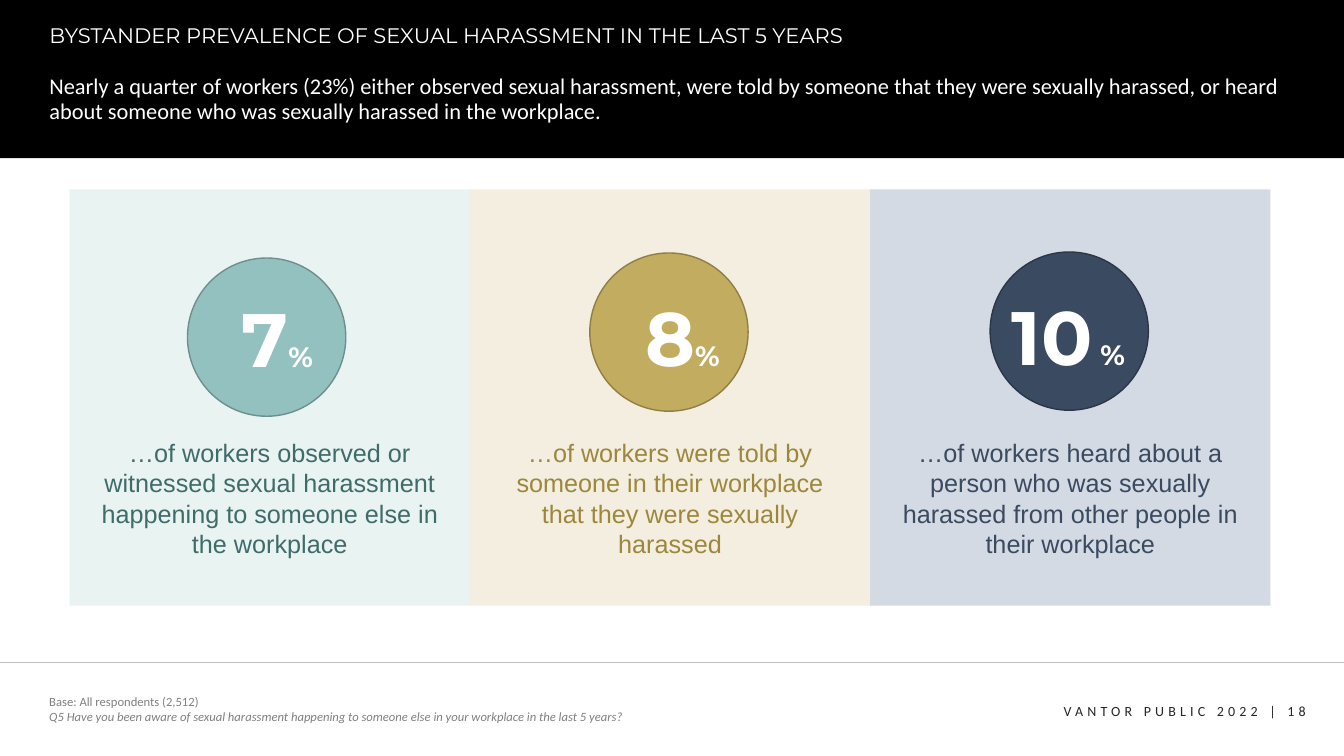
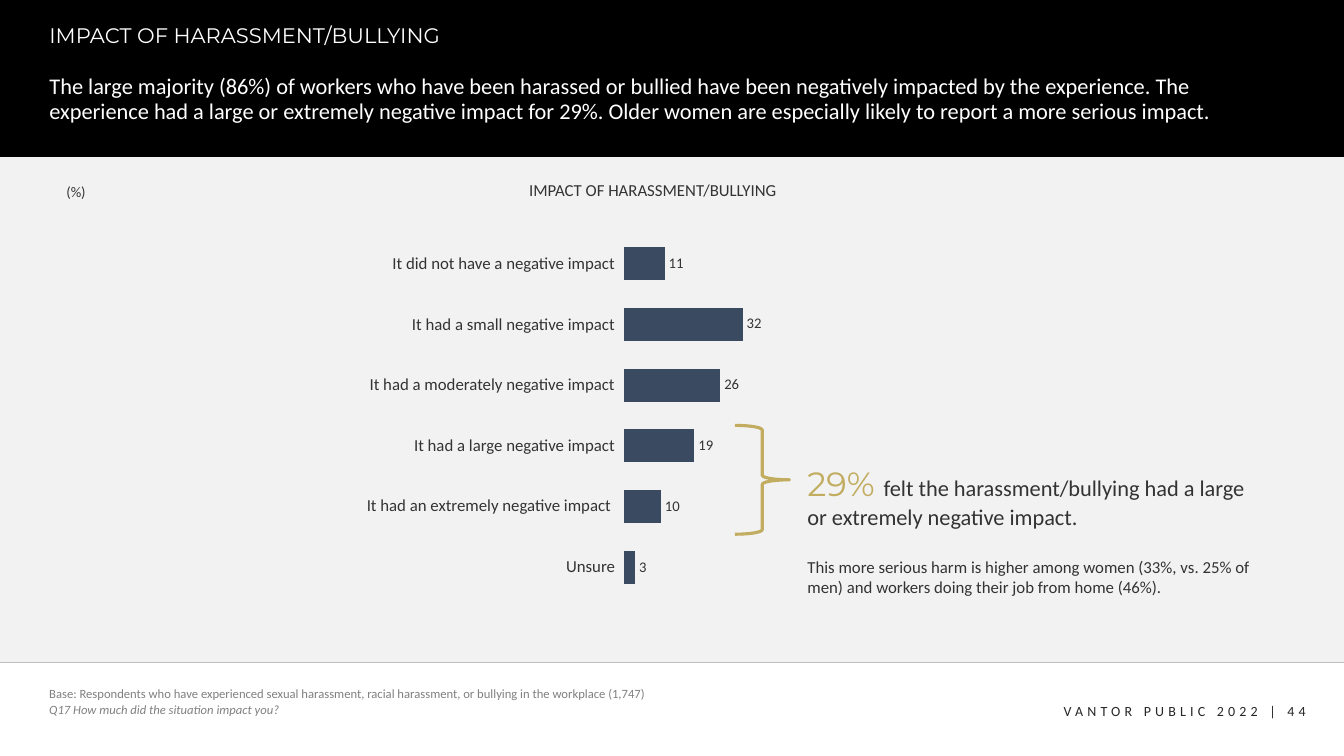
import pptx
import pptx.chart.data
import pptx.dml.color
import pptx.enum.chart
import pptx.enum.shapes
import pptx.enum.text
import pptx.oxml
import pptx.oxml.ns
import pptx.util

Inches = pptx.util.Inches
Pt = pptx.util.Pt
SHAPE = pptx.enum.shapes.MSO_SHAPE
ALIGN = pptx.enum.text.PP_ALIGN
ANCHOR = pptx.enum.text.MSO_ANCHOR
qn = pptx.oxml.ns.qn

COLORS = {
    "black": "000000", "white": "FFFFFF", "panel": "F2F2F2", "rule": "BFBFBF",
    "text": "333333", "footer": "262626", "note": "808080",
    "teal": "93C1BF", "teal_line": "6D8F8D", "teal_pale": "E9F3F2", "teal_text": "3E6C6A",
    "gold": "C1AC5F", "gold_line": "8F7F46", "gold_pale": "F3EEDF", "gold_text": "9C873C",
    "navy": "3A4A60", "navy_line": "2B3747", "navy_pale": "D3DAE4", "navy_text": "3A4A60",
}
BODY, HEAD, CAPTION = "Calibri", "Montserrat", "Arial"
WIDTH, HEIGHT = 13.33, 7.5
BAND_H, RULE_Y = 1.57, 6.57
NO_GRID_STYLE = "{2D5ABB26-0587-4C30-8999-92F81FD0307C}"


def rgb(name):
    return pptx.dml.color.RGBColor.from_string(COLORS[name])


def xml(tag, inner=""):
    """Build one element in the chart or drawing namespace."""
    return pptx.oxml.parse_xml(
        f"<{tag} {pptx.oxml.ns.nsdecls('a', 'c')}>{inner}</{tag}>")


class Deck:
    def __init__(self):
        self.prs = pptx.Presentation()
        self.prs.slide_width = Inches(WIDTH)
        self.prs.slide_height = Inches(HEIGHT)
        self.s = None

    def font(self, font, size, color, name=BODY, bold=False, italic=False):
        font.size, font.name = Pt(size), name
        font.bold, font.italic = bold, italic
        font.color.rgb = rgb(color)

    def place(self, sp, box):
        sp.left, sp.top, sp.width, sp.height = map(Inches, box)

    def fill_text(self, tf, paragraphs, align=ALIGN.LEFT, anchor=ANCHOR.TOP,
                  spacing=None, before=0):
        """Write paragraphs, each a list of (text, font settings) runs."""
        tf.word_wrap = True
        tf.auto_size = pptx.enum.text.MSO_AUTO_SIZE.NONE
        tf.vertical_anchor = anchor
        for i, runs in enumerate(paragraphs):
            p = tf.add_paragraph() if i else tf.paragraphs[0]
            p.alignment, p.line_spacing, p.space_before = align, spacing, Pt(before)
            for text, style in runs:
                r = p.add_run()
                r.text = text
                self.font(r.font, **style)

    def text(self, box, paragraphs, **layout):
        sp = self.s.shapes.add_textbox(*map(Inches, box))
        self.fill_text(sp.text_frame, paragraphs, **layout)
        return sp

    def shape(self, kind, box, fill=None, line=None, weight=1):
        sp = self.s.shapes.add_shape(kind, *map(Inches, box))
        sp.shadow.inherit = False
        if fill:
            sp.fill.solid()
            sp.fill.fore_color.rgb = rgb(fill)
        else:
            sp.fill.background()
        if line:
            sp.line.color.rgb = rgb(line)
            sp.line.width = Pt(weight)
        else:
            sp.line.fill.background()
        return sp

    def rule(self, y):
        line = self.s.shapes.add_connector(
            pptx.enum.shapes.MSO_CONNECTOR.STRAIGHT,
            0, Inches(y), Inches(WIDTH), Inches(y))
        line.line.color.rgb = rgb("rule")
        line.line.width = Pt(0.5)
        line.element.spPr.append(xml("a:effectLst"))

    def slide(self, title, summary, page, base, question, note_y, panel=None):
        """Start a slide with its band, title, summary, notes and footer."""
        self.s = self.prs.slides.add_slide(self.prs.slide_layouts[1])
        band = self.shape(SHAPE.RECTANGLE, (0, 0, WIDTH, BAND_H), "black")
        self.s.shapes._spTree.insert(2, band.element)
        if panel:
            self.shape(SHAPE.RECTANGLE, (0, BAND_H - 0.01, WIDTH, RULE_Y - BAND_H + 0.01), panel)
        self.rule(RULE_Y)

        head, body = self.s.placeholders
        self.place(head, (0.39, 0.2, 12.55, 0.4))
        self.fill_text(head.text_frame, [[(title, dict(size=15, color="white", name=HEAD))]],
                       spacing=0.9)
        self.place(body, (0.39, 0.6, 12.55, 0.78))
        self.fill_text(body.text_frame, [[(summary, dict(size=16, color="white"))]],
                       anchor=ANCHOR.MIDDLE, spacing=0.9, before=10)
        pPr = body.text_frame.paragraphs[0]._p.get_or_add_pPr()
        pPr.set("marL", "0")
        pPr.set("indent", "0")
        pPr.append(xml("a:buNone"))

        note = dict(size=9, color="note")
        self.text((0.39, note_y, 10, 0.4),
                  [[(base, note)], [(question, dict(note, italic=True))]],
                  anchor=ANCHOR.MIDDLE)
        footer = self.text((10.08, 6.92, 2.97, 0.27),
                           [[(f"VANTOR PUBLIC 2022 | {page}", dict(size=10, color="footer"))]],
                           align=ALIGN.RIGHT)
        footer.text_frame.paragraphs[0].runs[0]._r.get_or_add_rPr().set("spc", "300")

    def badge(self, hue, circle, number_box, number, unit):
        """Draw a circle with a large percentage as one group."""
        disc = self.shape(SHAPE.OVAL, circle, hue, f"{hue}_line")
        style = dict(size=54, color="white", name=HEAD, bold=True)
        label = self.text(number_box, [[(number, style), (unit, dict(style, size=20))]],
                          align=ALIGN.CENTER)
        self.s.shapes.add_group_shape([disc, label])

    def table(self, box, rows):
        frame = self.s.shapes.add_table(len(rows), 1, *map(Inches, box))
        table = frame.table
        table.first_row = table.horz_banding = False
        table._tbl.tblPr.find(qn("a:tableStyleId")).text = NO_GRID_STYLE
        for i, label in enumerate(rows):
            cell = table.cell(i, 0)
            cell.fill.background()
            cell.margin_left = cell.margin_right = cell.margin_top = Inches(0.01)
            cell.margin_bottom = 0
            cell.vertical_anchor = ANCHOR.MIDDLE
            p = cell.text_frame.paragraphs[0]
            p.text = label
            p.alignment = ALIGN.RIGHT
            self.font(p.runs[0].font, 12, "text")

    def bars(self, box, values, plot_box):
        data = pptx.chart.data.CategoryChartData()
        data.categories = list(values)
        data.add_series("Series 1", list(values.values()))
        chart = self.s.shapes.add_chart(
            pptx.enum.chart.XL_CHART_TYPE.BAR_CLUSTERED, *map(Inches, box), data).chart
        self.font(chart.font, 12, "text")
        chart.has_legend = chart.has_title = False
        cat, val = chart.category_axis, chart.value_axis
        cat.reverse_order = True
        val.minimum_scale, val.maximum_scale = 0, 100
        val.has_major_gridlines = False
        cat.visible = val.visible = False

        plot = chart.plots[0]
        plot.gap_width = 84
        plot.vary_by_categories = False
        fill = plot.series[0].format.fill
        fill.solid()
        fill.fore_color.rgb = rgb("navy")
        plot.has_data_labels = True
        labels = plot.data_labels
        labels.show_value = True
        labels.position = pptx.enum.chart.XL_LABEL_POSITION.OUTSIDE_END
        self.font(labels.font, 10.5, "text")

        space = chart._chartSpace
        space.find(qn("c:chart")).addnext(
            xml("c:spPr", "<a:noFill/><a:ln><a:noFill/></a:ln>"))
        area = space.find(qn("c:chart")).find(qn("c:plotArea"))
        for old in area.findall(qn("c:layout")):
            area.remove(old)
        parts = [("layoutTarget", "inner"), ("xMode", "edge"), ("yMode", "edge")]
        parts += zip("xywh", plot_box)
        inner = "".join(f'<c:{tag} val="{value}"/>' for tag, value in parts)
        area.insert(0, xml("c:layout", f"<c:manualLayout>{inner}</c:manualLayout>"))


def prevalence_slide(deck):
    deck.slide(
        "BYSTANDER PREVALENCE OF SEXUAL HARASSMENT IN THE LAST 5 YEARS",
        "Nearly a quarter of workers (23%) either observed sexual harassment, were told by "
        "someone that they were sexually harassed, or heard about someone who was sexually "
        "harassed in the workplace.",
        18, "Base: All respondents (2,512)",
        "Q5 Have you been aware of sexual harassment happening to someone else in your "
        "workplace in the last 5 years?", note_y=6.83)
    card_w, size = 3.97, 1.57
    cards = [
        ("teal", (1.86, 2.56), (2.04, 2.85, 1.42, 1.01), "7", "%",
         "…of workers observed or witnessed sexual harassment happening to someone else "
         "in the workplace"),
        ("gold", (5.85, 2.51), (6.27, 2.84, 1, 1.01), "8", "%",
         "…of workers were told by someone in their workplace that they were sexually "
         "harassed"),
        ("navy", (9.82, 2.5), (9.85, 2.83, 1.57, 1.01), "10", " % ",
         "…of workers heard about a person who was sexually harassed from other people in "
         "their workplace"),
    ]
    for i, (hue, corner, number_box, number, unit, caption) in enumerate(cards):
        left = 0.69 + i * card_w
        deck.shape(SHAPE.RECTANGLE, (left, 1.88, card_w, 4.13), f"{hue}_pale")
        deck.badge(hue, (*corner, size, size), number_box, number, unit)
        deck.text((left + 0.13, 4.29, 3.71, 1.31),
                  [[(caption, dict(size=18, color=f"{hue}_text", name=CAPTION))]],
                  align=ALIGN.CENTER)


def impact_slide(deck):
    deck.slide(
        "IMPACT OF HARASSMENT/BULLYING",
        "The large majority (86%) of workers who have been harassed or bullied have been "
        "negatively impacted by the experience. The experience had a large or extremely "
        "negative impact for 29%. Older women are especially likely to report a more "
        "serious impact.",
        44, "Base: Respondents who have experienced sexual harassment, racial harassment, or "
        "bullying in the workplace (1,747)",
        "Q17 How much did the situation impact you?", note_y=6.76, panel="panel")
    impacts = {
        "It did not have a negative impact": 11,
        "It had a small negative impact": 32,
        "It had a moderately negative impact": 26,
        "It had a large negative impact": 19,
        "It had an extremely negative impact ": 10,
        "Unsure": 3,
    }
    heading = dict(anchor=ANCHOR.MIDDLE, spacing=0.9, before=10)
    deck.text((5.15, 1.65, 3.83, 0.5),
              [[("IMPACT OF HARASSMENT/BULLYING", dict(size=12, color="text"))]], **heading)
    deck.text((0.56, 1.66, 0.52, 0.5), [[("(%)", dict(size=10.5, color="text"))]], **heading)
    deck.bars((5.82, 2.14, 4.6, 4.31), impacts, (0.08, 0.04, 0.8, 0.84))
    deck.table((0.67, 2.31, 5.44, 3.61), list(impacts))
    deck.shape(SHAPE.RIGHT_BRACE, (7.29, 4.22, 0.54, 1.08), line="gold", weight=2.25)
    callout = deck.text((7.91, 4.54, 4.6, 1.45), [
        [("29% ", dict(size=24, color="gold", name=HEAD)),
         ("felt the harassment/bullying had a large or extremely negative impact.",
          dict(size=16, color="text"))],
        [("This more serious harm is higher among women (33%, vs. 25% of men) and workers "
          "doing their job from home (46%).", dict(size=12, color="text"))],
    ])
    callout.text_frame.paragraphs[1].space_before = Pt(19)


def main():
    deck = Deck()
    prevalence_slide(deck)
    impact_slide(deck)
    deck.prs.save("out.pptx")


if __name__ == "__main__":
    main()
